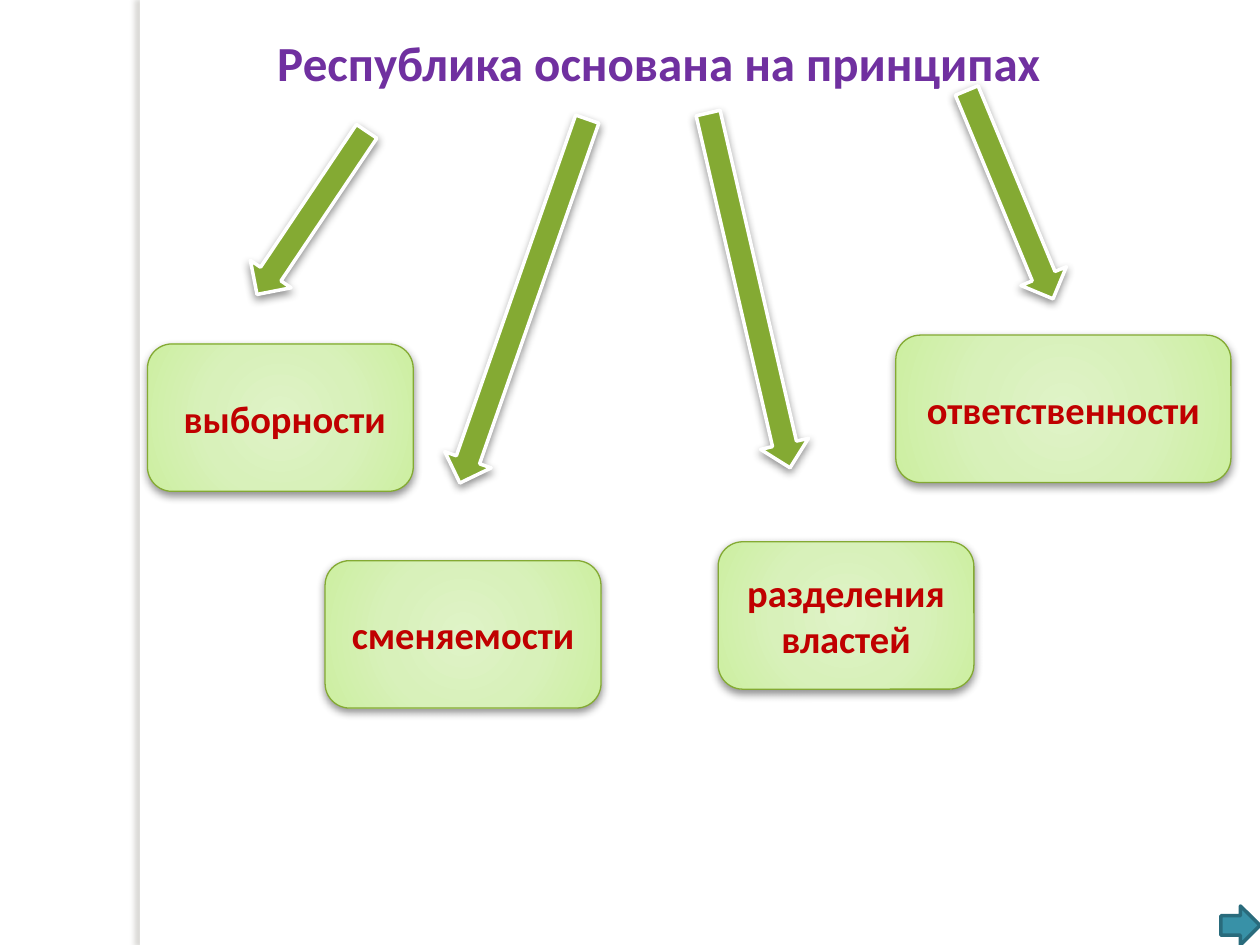
from pptx import Presentation
from pptx.dml.color import RGBColor
from pptx.enum.shapes import MSO_SHAPE
from pptx.enum.text import MSO_ANCHOR, PP_ALIGN
from pptx.oxml import parse_xml
from pptx.oxml.ns import nsdecls, qn
from pptx.util import Inches, Pt

COLORS = {
    "white": "FFFFFF", "title": "7030A0", "label": "C00000", "green": "84AA33",
    "teal": "3891A7", "edge": "296B7C", "shade": "000000", "strip": "736F63",
}
GLOW = [(0, "DFF3C7"), (50, "D8F1BA"), (97, "CDEFA2"), (100, "CAF199")]


class Board:
    def __init__(self, slide, font="Calibri"):
        self.slide = slide
        self.font = font

    def color(self, name):
        return RGBColor.from_string(COLORS[name])

    def style(self, para, size, color, align):
        para.alignment = align
        font = para.font
        font.name, font.size, font.bold = self.font, Pt(size), True
        font.color.rgb = self.color(color)

    def title(self, text, *box):
        shape = self.slide.shapes.title
        shape.left, shape.top, shape.width, shape.height = map(Inches, box)
        frame = shape.text_frame
        frame.text = text
        frame.vertical_anchor = MSO_ANCHOR.MIDDLE
        self.style(frame.paragraphs[0], 28, "title", PP_ALIGN.LEFT)

    def shape(self, kind, box, fill, line=None, width=0):
        shape = self.slide.shapes.add_shape(kind, *map(Inches, box))
        shape.shadow.inherit = False
        shape.fill.solid()
        shape.fill.fore_color.rgb = self.color(fill)
        if line:
            shape.line.color.rgb = self.color(line)
            shape.line.width = Pt(width)
        else:
            shape.line.fill.background()
        return shape

    def shadow(self, shape, color="shade", alpha=43, blur=5, dist=2, angle=90):
        effects = shape._element.spPr.find(qn("a:effectLst"))
        effects.append(parse_xml(
            f'<a:outerShdw {nsdecls("a")} blurRad="{Pt(blur)}" dist="{Pt(dist)}" '
            f'dir="{angle * 60000}" algn="ctr" rotWithShape="0">'
            f'<a:srgbClr val="{COLORS[color]}"><a:alpha val="{alpha * 1000}"/>'
            '</a:srgbClr></a:outerShdw>'))

    def glow(self, shape):
        stops = "".join(
            f'<a:gs pos="{pos * 1000}"><a:srgbClr val="{color}"/></a:gs>'
            for pos, color in GLOW)
        props = shape._element.spPr
        props.replace(props.find(qn("a:solidFill")), parse_xml(
            f'<a:gradFill {nsdecls("a")} rotWithShape="1"><a:gsLst>{stops}</a:gsLst>'
            '<a:path path="circle"><a:fillToRect l="50000" t="50000" r="50000" '
            'b="50000"/></a:path></a:gradFill>'))

    def strip(self, *box):
        shape = self.shape(MSO_SHAPE.RECTANGLE, box, "white")
        self.shadow(shape, "strip", 25, 3, 3, 180)

    def arrow(self, left, top, height, turn):
        box = (left, top, 0.39, height)
        shape = self.shape(MSO_SHAPE.DOWN_ARROW, box, "green", "white", 2)
        shape.rotation = turn
        self.shadow(shape)

    def card(self, text, left, top, width):
        box = (left, top, width, 1.17)
        shape = self.shape(MSO_SHAPE.ROUNDED_RECTANGLE, box, "green", "green", 0.75)
        self.glow(shape)
        self.shadow(shape)
        frame = shape.text_frame
        frame.word_wrap = True
        frame.vertical_anchor = MSO_ANCHOR.MIDDLE
        frame.text = text
        self.style(frame.paragraphs[0], 22, "label", PP_ALIGN.CENTER)

    def button(self, *box):
        self.shape(MSO_SHAPE.RIGHT_ARROW, box, "teal", "edge", 2)


def main():
    deck = Presentation()
    deck.slide_width, deck.slide_height = Inches(10), Inches(7.5)
    board = Board(deck.slides.add_slide(deck.slide_layouts[5]))

    # Side strip and heading
    board.strip(1.11, 0, 0.08, 7.5)
    board.title("Республика основана на принципах", 2.1, 0.18, 7.11, 0.62)

    # Arrows from the heading to the principles
    for arrow in [
        (2.28, 0.91, 1.56, 33.9),
        (5.75, 0.86, 2.89, 347),
        (7.82, 0.65, 1.79, 337.5),
        (3.96, 0.86, 3.06, 19.3),
    ]:
        board.arrow(*arrow)

    # Principles
    for card in [
        (" выборности", 1.17, 2.73, 2.11),
        ("сменяемости", 2.58, 4.45, 2.19),
        ("разделения властей", 5.7, 4.3, 2.03),
        ("ответственности", 7.11, 2.66, 2.66),
    ]:
        board.card(*card)

    # Next-slide button
    board.button(9.69, 7.19, 0.31, 0.31)

    deck.save("out.pptx")


if __name__ == "__main__":
    main()
